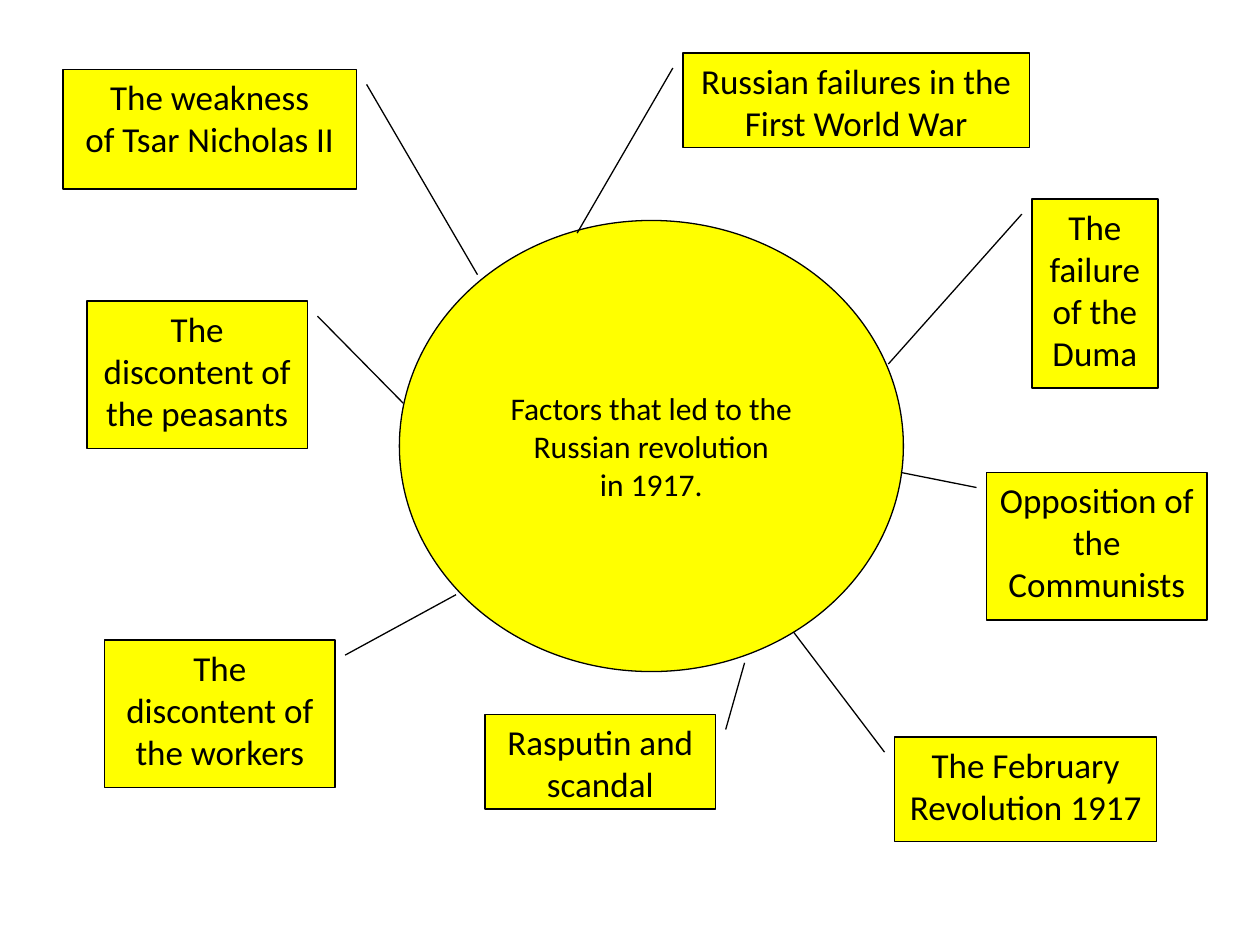
from dataclasses import dataclass

from pptx import Presentation
from pptx.dml.color import RGBColor
from pptx.enum import shapes, text
from pptx.util import Inches, Pt

COLORS = {"fill": "FFFF00", "ink": "000000"}
FONT = "Calibri"
LEADER_GAP = 0.08   # from the box side to the start of its leader line
LEADER_DROP = 0.12  # from the box top to the start of its leader line


@dataclass(frozen=True)
class Factor:
    wording: str
    left: float
    top: float
    width: float
    height: float
    tip_x: float  # where the leader line meets the ellipse
    tip_y: float


FACTORS = [
    Factor("The weakness\nof Tsar Nicholas II", 0.5, 0.55, 2.33, 0.95, 3.79, 2.18),
    Factor("The discontent of the peasants", 0.69, 2.39, 1.75, 1.17, 3.2, 3.2),
    Factor("The discontent of the workers", 0.83, 5.08, 1.83, 1.17, 3.62, 4.72),
    Factor("Opposition of the Communists", 7.83, 3.75, 1.75, 1.17, 7.15, 3.75),
    Factor("The failure of the Duma", 8.19, 1.58, 1, 1.5, 7.05, 2.89),
    Factor("Russian failures in the First World War", 5.42, 0.42, 2.75, 0.75, 4.58, 1.85),
    Factor("The February\nRevolution 1917", 7.1, 5.85, 2.08, 0.83, 6.3, 5.02),
    Factor("Rasputin and scandal", 3.85, 5.67, 1.83, 0.75, 5.91, 5.26),
]


def write_text(shape, wording: str, *, size: float, anchor, wrap: bool = True) -> None:
    frame = shape.text_frame
    frame.text = wording
    frame.word_wrap = wrap
    frame.vertical_anchor = anchor
    for paragraph in frame.paragraphs:
        paragraph.alignment = text.PP_ALIGN.CENTER
        for run in paragraph.runs:
            run.font.name = FONT
            run.font.size = Pt(size)
            run.font.color.rgb = RGBColor.from_string(COLORS["ink"])


def add_outlined(slide, kind, left: float, top: float, width: float, height: float):
    shape = slide.shapes.add_shape(
        kind, Inches(left), Inches(top), Inches(width), Inches(height))
    shape.shadow.inherit = False
    shape.fill.solid()
    shape.fill.fore_color.rgb = RGBColor.from_string(COLORS["fill"])
    shape.line.color.rgb = RGBColor.from_string(COLORS["ink"])
    shape.line.width = Pt(0.75)
    return shape


def add_factor(slide, factor: Factor) -> None:
    callout = add_outlined(slide, shapes.MSO_SHAPE.LINE_CALLOUT_1,
                           factor.left, factor.top, factor.width, factor.height)
    # The leader starts on the side that faces the ellipse
    gap = LEADER_GAP / factor.width
    start_x = 1 + gap if factor.tip_x > factor.left else -gap
    leader = (LEADER_DROP / factor.height, start_x,
              (factor.tip_y - factor.top) / factor.height,
              (factor.tip_x - factor.left) / factor.width)
    for index, value in enumerate(leader):
        callout.adjustments[index] = value
    write_text(callout, factor.wording, size=20, anchor=text.MSO_ANCHOR.TOP)


def main() -> None:
    deck = Presentation()
    deck.slide_width, deck.slide_height = Inches(10), Inches(7.5)
    slide = deck.slides.add_slide(deck.slide_layouts[6])

    # Central topic
    topic = add_outlined(slide, shapes.MSO_SHAPE.OVAL, 3.17, 1.75, 4, 3.58)
    write_text(topic, "Factors that led to the\nRussian revolution\nin 1917.",
               size=18, anchor=text.MSO_ANCHOR.MIDDLE, wrap=False)

    # Factors around it
    for factor in FACTORS:
        add_factor(slide, factor)

    deck.save("out.pptx")


if __name__ == "__main__":
    main()
